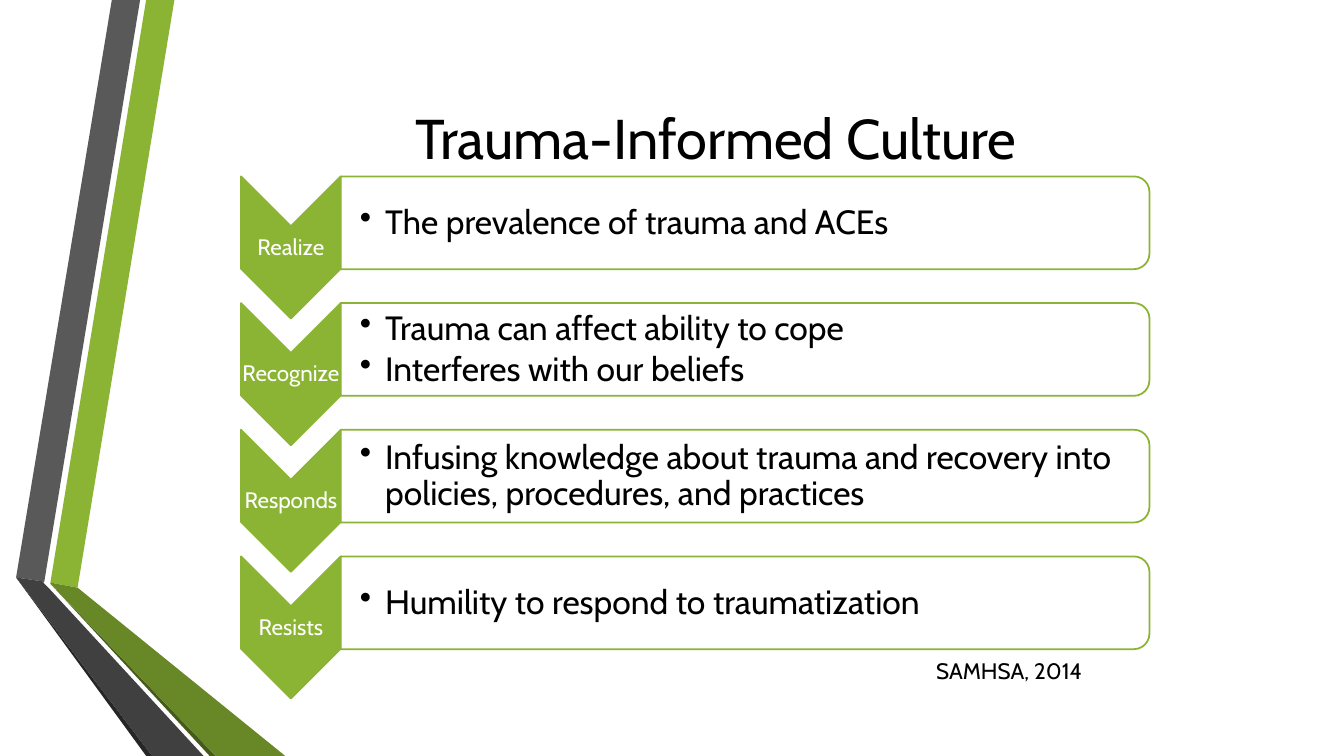
from lxml.etree import SubElement
from pptx import Presentation
from pptx.dml.color import RGBColor
from pptx.enum.shapes import MSO_SHAPE as SHAPE
from pptx.enum.text import MSO_ANCHOR as ANCHOR, PP_ALIGN as ALIGN
from pptx.oxml.ns import qn
from pptx.util import Inches, Pt

COLORS = {
    "green": "8BB434", "green_mid": "688727", "green_dark": "465A1A",
    "gray": "595959", "gray_mid": "404040", "gray_dark": "262626",
    "white": "FFFFFF", "black": "000000",
}
RIBBONS = [
    ("green", [(0.5, 5.78), (0.77, 5.83), (1.73, 0), (1.45, 0)]),
    ("gray", [(1.39, 0), (1.11, 0), (0.16, 5.73), (0.44, 5.77)]),
    ("gray_dark", [(0.16, 5.73), (1.45, 7.5), (1.51, 7.5)]),
    ("green_dark", [(0.5, 5.79), (2.08, 7.5), (2.14, 7.5)]),
    ("green_mid", [(0.5, 5.79), (2.14, 7.5), (2.83, 7.5), (0.77, 5.83), (0.5, 5.78)]),
    ("gray_mid", [(2.02, 7.5), (0.48, 5.83), (0.43, 5.78), (0.44, 5.77), (0.16, 5.73), (1.51, 7.5)]),
]
STEPS = [
    ("Realize", ["The prevalence of trauma and ACEs"]),
    ("Recognize", ["Trauma can affect ability to cope", "Interferes with our beliefs"]),
    ("Responds", ["Infusing knowledge about trauma and recovery into policies, procedures, and practices"]),
    ("Resists", ["Humility to respond to traumatization"]),
]
FIRST_TOP, LAST_TOP = 1.96, 5.73


class Deck:
    """Holds the style and the current slide, and draws each kind of element."""

    def __init__(self, prs, font):
        self.font = font
        self.s = prs.slides.add_slide(prs.slide_layouts[5])

    def color(self, name):
        return RGBColor.from_string(COLORS[name])

    def paint(self, sp, fill, line=None):
        sp.shadow.inherit = False
        sp.fill.solid()
        sp.fill.fore_color.rgb = self.color(fill)
        if line:
            sp.line.color.rgb = self.color(line)
            sp.line.width = Pt(1.25)
        else:
            sp.line.fill.background()

    def set_lines(self, tf, lines, size, color="black", align=ALIGN.CENTER):
        tf.text = "\n".join(lines)
        tf.word_wrap = True
        for p in tf.paragraphs:
            p.alignment = align
            for r in p.runs:
                r.font.name = self.font
                r.font.size = Pt(size)
                r.font.color.rgb = self.color(color)

    def title(self, text, x, y, w, h):
        sp = self.s.shapes.title
        sp.left, sp.top, sp.width, sp.height = map(Inches, (x, y, w, h))
        self.set_lines(sp.text_frame, [text], 40)
        sp.text_frame.vertical_anchor = ANCHOR.MIDDLE

    def ribbon(self, color, points):
        start, *rest = [(Inches(x), Inches(y)) for x, y in points]
        builder = self.s.shapes.build_freeform(*start)
        builder.add_line_segments(rest, close=True)
        self.paint(builder.convert_to_shape(), color)

    def turned(self, kind, x, y, w, h, fill):
        sp = self.s.shapes.add_shape(kind, *map(Inches, (x, y, w, h)))
        sp.rotation = 90
        self.paint(sp, fill, "green")
        return sp

    def text(self, lines, x, y, w, h, size, color="black", align=ALIGN.CENTER):
        sp = self.s.shapes.add_textbox(*map(Inches, (x, y, w, h)))
        self.set_lines(sp.text_frame, lines, size, color, align)
        return sp.text_frame

    def fit(self, tf, left, margin, after):
        tf.vertical_anchor = ANCHOR.MIDDLE
        tf.margin_left = Inches(left)
        tf.margin_right = tf.margin_top = tf.margin_bottom = Inches(margin)
        for p in tf.paragraphs:
            p.line_spacing = 0.9
            p.space_after = Pt(after)

    def chevron(self, label, top):
        self.turned(SHAPE.CHEVRON, 2.18, top, 1.41, 0.99, "green")
        tf = self.text([label], 2.39, top + 0.29, 0.99, 0.42, 16, "white")
        self.fit(tf, 0.01, 0.01, 5.6)

    def bar(self, items, top):
        sp = self.turned(SHAPE.ROUND_2_SAME_RECTANGLE, 6.93, top - 3.76, 0.92, 8.02, "white")
        fill = sp.element.spPr.find(qn("a:solidFill"))
        SubElement(fill.find(qn("a:srgbClr")), qn("a:alpha"), val="90000")
        tf = self.text(items, 3.38, top - 0.16, 7.98, 0.83, 24, align=ALIGN.LEFT)
        self.fit(tf, 0.19, 0.02, 3.6)
        for p in tf.paragraphs:
            pPr = p._p.get_or_add_pPr()
            pPr.set("marL", str(Inches(0.25)))
            pPr.set("indent", str(Inches(-0.25)))
            SubElement(pPr, qn("a:buChar"), char="•")


def main():
    prs = Presentation()
    prs.slide_width, prs.slide_height = Inches(13.33), Inches(7.5)
    deck = Deck(prs, "Cabin")
    for color, points in RIBBONS:
        deck.ribbon(color, points)
    deck.title("Trauma-Informed Culture", 1.62, 0.75, 10.96, 1.23)
    pitch = (LAST_TOP - FIRST_TOP) / (len(STEPS) - 1)
    for i, (label, items) in enumerate(STEPS):
        top = FIRST_TOP + i * pitch
        deck.chevron(label, top)
        deck.bar(items, top)
    deck.text(["SAMHSA, 2014"], 9.01, 6.47, 2, 0.37, 16)
    prs.save("out.pptx")


if __name__ == "__main__":
    main()
